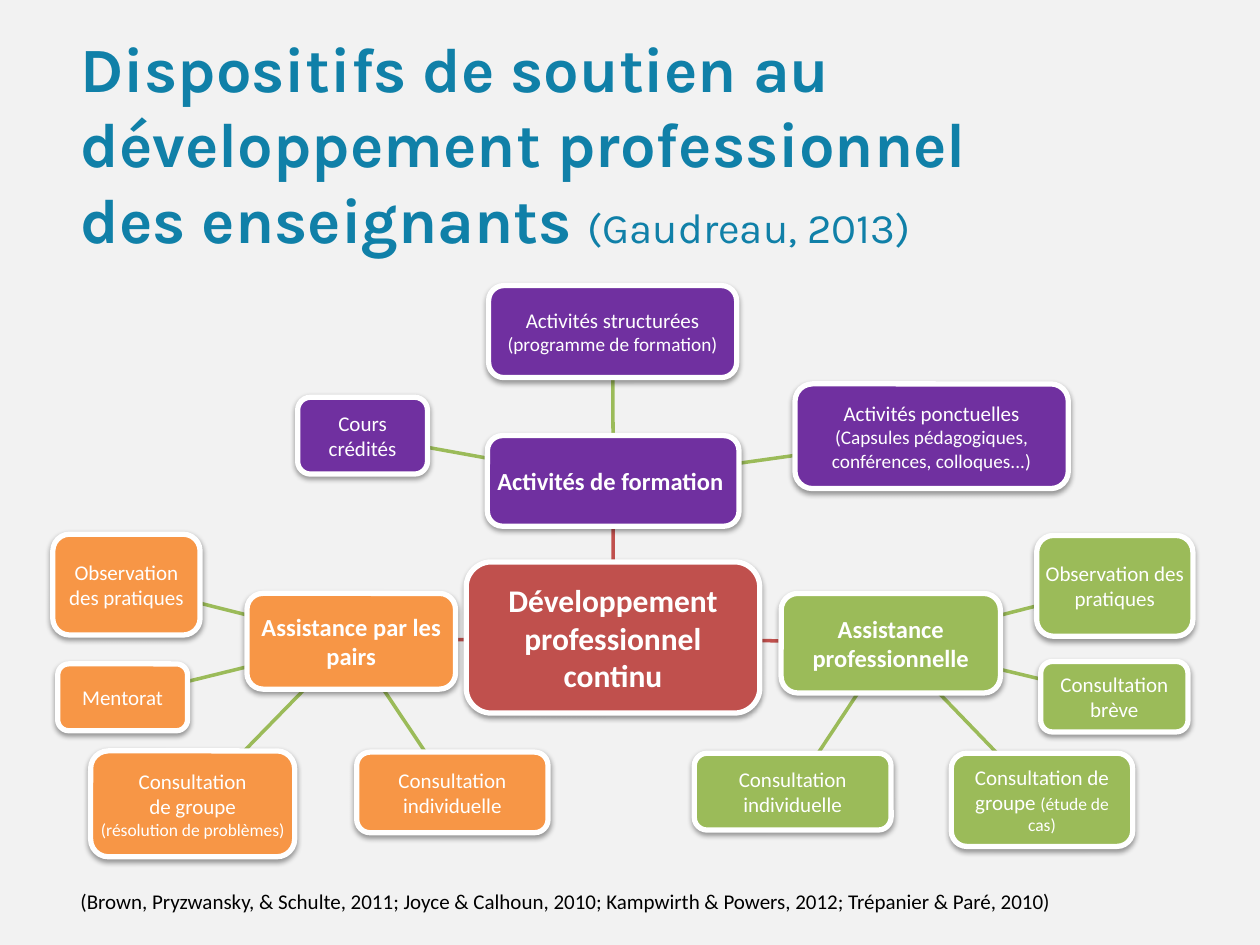
from dataclasses import dataclass

from lxml import etree
from pptx import Presentation
from pptx.dml.color import RGBColor
from pptx.enum import shapes, text
from pptx.oxml import ns
from pptx.util import Pt

# Content: title and sources
TITLE = [
    [("Dispositifs de soutien au développement professionnel", "title", True)],
    [("des enseignants ", "title", True), ("(Gaudreau, 2013)", "citation", False)],
]
SOURCES = ("(Brown, Pryzwansky, & Schulte, 2011; Joyce & Calhoun, 2010; "
           "Kampwirth & Powers, 2012; Trépanier & Paré, 2010)")

# Content: paragraphs are lists of (text, size name); boxes are left, top, width, height
CENTRE = ("core", (266.4, 321.1, 167.8, 86.4),
          [[("Développement professionnel", "core")], [("continu", "core")]])
BRANCHES = [
    ("peers", (141.1, 339.1, 119.2, 54.7), [[("Assistance par les pairs", "branch")]], [
        ((33, 379.4, 74.2, 38.2), [[("Mentorat", "leaf")]]),
        ((30.2, 305.3, 84.2, 57.6), [[("Observation des pratiques", "leaf")]]),
        ((51.8, 429.1, 116.6, 60.5), [[("Consultation", "leaf")], [("de groupe", "leaf")],
                                      [("(résolution de problèmes)", "small")]]),
        ((203.8, 429.8, 109.4, 46.1), [[("Consultation individuelle", "leaf")]]),
    ]),
    ("experts", (446.4, 339.1, 125.3, 56.9), [[("Assistance professionnelle", "branch")]], [
        ((592.4, 306, 89.3, 57.6), [[("Observation des pratiques", "leaf")]]),
        ((396.7, 430.4, 112.5, 43.9), [[("Consultation individuelle", "leaf")]]),
        ((594.7, 378, 84.2, 40.3), [[("Consultation brève", "leaf")]]),
        ((543.6, 430.4, 103.7, 53.3), [[("Consultation de groupe ", "leaf"),
                                        ("(étude de cas)", "small")]]),
    ]),
    ("training", (278.5, 248.9, 143.8, 51.8), [[("Activités de formation ", "branch")]], [
        ((279.2, 163.2, 141.8, 52.6), [[("Activités structurées ", "leaf"),
                                        ("(programme de formation)", "note")]]),
        ((454.3, 219.4, 156.2, 59.8), [
            [("Activités ponctuelles ", "leaf"),
             ("(Capsules pédagogiques, conférences, colloques...)", "note")]]),
        ((170.1, 227, 74.2, 43.9), [[("Cours crédités", "leaf")]]),
    ]),
]


@dataclass(frozen=True)
class Theme:
    colors = {"back": "F2F2F2", "title": "1080A8", "core": "C0504D", "peers": "F79646",
              "experts": "9BBB59", "training": "7030A0", "leaf_line": "9BBB59",
              "white": "FFFFFF", "black": "000000"}
    sizes = {"title": 36, "citation": 24, "core": 18, "branch": 14, "leaf": 12,
             "note": 11, "small": 10, "sources": 12}
    title_font = "Karla"
    body_font = "Calibri"
    inset_ratio = 0.19

    def rgb(self, name):
        return RGBColor.from_string(self.colors[name])

    def size(self, name):
        return Pt(self.sizes[name])


THEME = Theme()


def style(font, family, color, bold=None):
    font.name = family
    font.color.rgb = THEME.rgb(color)
    font.bold = bold


def centre(box):
    x, y, w, h = box
    return x + w / 2, y + h / 2


def edge_point(box, target):
    """Point where the line from the centre of box to target leaves the box."""
    cx, cy = centre(box)
    dx, dy = target[0] - cx, target[1] - cy
    share = 1 / max(abs(dx) / (box[2] / 2), abs(dy) / (box[3] / 2))
    return cx + dx * share, cy + dy * share


def add_link(slide, start, end, color):
    ends = edge_point(start, centre(end)) + edge_point(end, centre(start))
    cx = slide.shapes.add_connector(shapes.MSO_CONNECTOR.STRAIGHT, *map(Pt, ends))
    cx.line.color.rgb = THEME.rgb(color)
    cx.line.width = Pt(2)
    etree.SubElement(cx._element.spPr, ns.qn("a:effectLst"))


def add_shadow(sp):
    sp.shadow.inherit = False
    effects = sp._element.spPr.find(ns.qn("a:effectLst"))
    shadow = etree.SubElement(effects, ns.qn("a:outerShdw"), blurRad=str(Pt(3.1)),
                              dist=str(Pt(1.6)), dir="5400000", rotWithShape="0")
    color = etree.SubElement(shadow, ns.qn("a:srgbClr"), val=THEME.colors["black"])
    etree.SubElement(color, ns.qn("a:alpha"), val="38000")


def add_node(slide, box, color, paragraphs):
    sp = slide.shapes.add_shape(shapes.MSO_SHAPE.ROUNDED_RECTANGLE, *map(Pt, box))
    sp.fill.solid()
    sp.fill.fore_color.rgb = THEME.rgb(color)
    sp.line.color.rgb = THEME.rgb("white")
    sp.line.width = Pt(3)
    add_shadow(sp)
    tf = sp.text_frame
    tf.word_wrap = True
    tf.vertical_anchor = text.MSO_ANCHOR.MIDDLE
    main = paragraphs[0][0][1]
    inset = Pt(round(THEME.sizes[main] * THEME.inset_ratio, 2))
    tf.margin_left = tf.margin_right = tf.margin_top = tf.margin_bottom = inset
    for i, runs in enumerate(paragraphs):
        p = tf.add_paragraph() if i else tf.paragraphs[0]
        p.alignment = text.PP_ALIGN.CENTER
        style(p.font, THEME.body_font, "white", main in ("core", "branch"))
        for words, size in runs:
            r = p.add_run()
            r.text = words
            r.font.size = THEME.size(size)


def add_title(slide):
    sp = slide.shapes.title
    sp.left, sp.top, sp.width, sp.height = map(Pt, (38.9, 13, 654.5, 138.2))
    tf = sp.text_frame
    tf.word_wrap = True
    tf.auto_size = text.MSO_AUTO_SIZE.NONE
    tf.vertical_anchor = text.MSO_ANCHOR.TOP
    for i, runs in enumerate(TITLE):
        p = tf.add_paragraph() if i else tf.paragraphs[0]
        p.alignment = text.PP_ALIGN.LEFT
        p.space_before = Pt(0)
        style(p.font, THEME.title_font, "title")
        for words, size, bold in runs:
            r = p.add_run()
            r.text = words
            r.font.size = THEME.size(size)
            r.font.bold = bold


def add_sources(slide):
    tf = slide.shapes.add_textbox(*map(Pt, (38.9, 504, 697, 21.6))).text_frame
    tf.word_wrap = True
    p = tf.paragraphs[0]
    p.text = SOURCES
    style(p.font, THEME.body_font, "black")
    p.font.size = THEME.size("sources")


def main():
    prs = Presentation()
    prs.slide_width, prs.slide_height = Pt(720), Pt(540)
    slide = prs.slides.add_slide(prs.slide_layouts.get_by_name("Title Only"))
    slide.background.fill.solid()
    slide.background.fill.fore_color.rgb = THEME.rgb("back")
    add_title(slide)

    # Links first, so that every box lies above them
    core_color, core_box, core_text = CENTRE
    for _, box, _, leaves in BRANCHES:
        add_link(slide, core_box, box, "core")
        for leaf_box, _ in leaves:
            add_link(slide, box, leaf_box, "leaf_line")

    # Boxes of the map
    add_node(slide, core_box, core_color, core_text)
    for color, box, paragraphs, leaves in BRANCHES:
        add_node(slide, box, color, paragraphs)
        for leaf_box, leaf_text in leaves:
            add_node(slide, leaf_box, color, leaf_text)

    add_sources(slide)
    prs.save("out.pptx")


if __name__ == "__main__":
    main()
